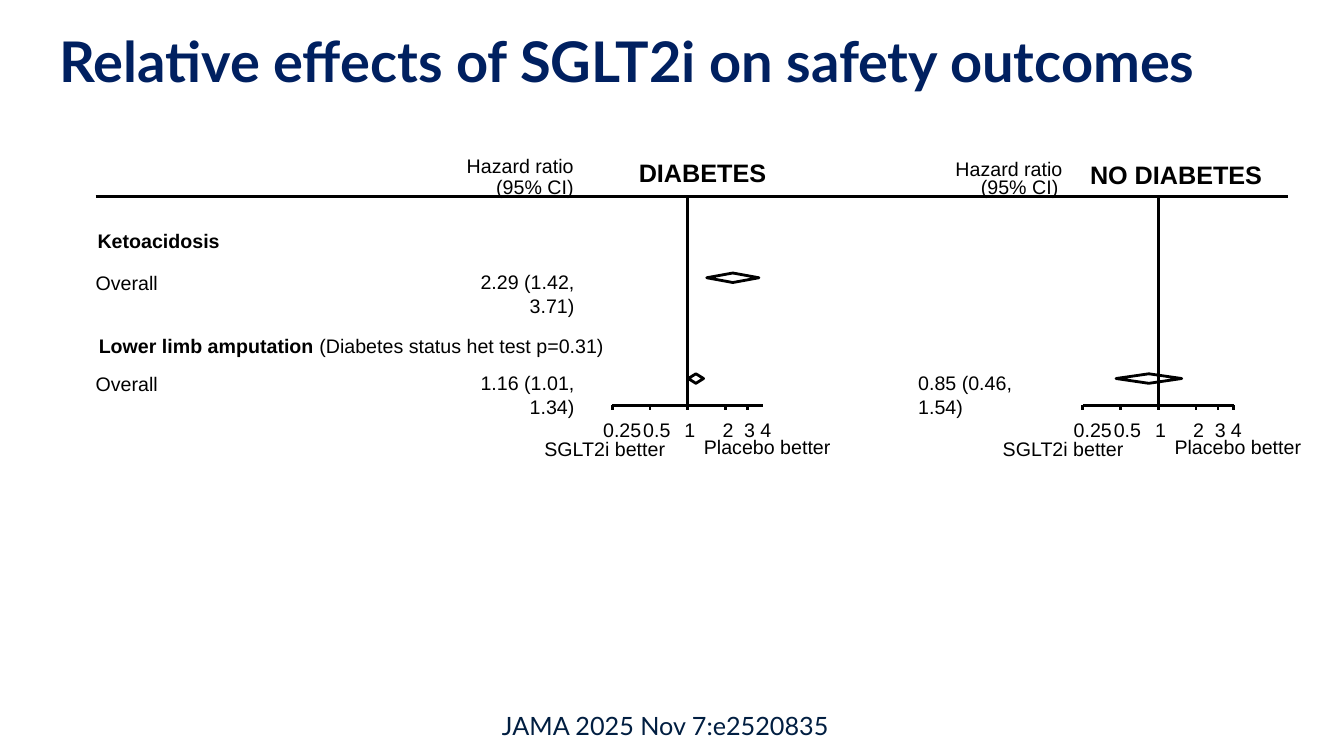
from math import log2

from lxml.etree import SubElement
from pptx import Presentation
from pptx.dml.color import RGBColor
from pptx.enum.shapes import MSO_CONNECTOR as Connector, MSO_SHAPE as Shape
from pptx.enum.text import MSO_ANCHOR as Anchor, MSO_AUTO_SIZE as AutoSize, PP_ALIGN as Align
from pptx.oxml.ns import qn
from pptx.util import Cm, Pt

BLACK = RGBColor(0x00, 0x00, 0x00)
WHITE = RGBColor(0xFF, 0xFF, 0xFF)
NAVY = RGBColor(0x00, 0x20, 0x60)
DARK_BLUE = RGBColor(0x01, 0x1E, 0x41)

# Vertical positions and axis scale, in centimetres
RULE_Y, AXIS_Y, TICK_END = 4.95, 10.21, 10.34
KETOACIDOSIS_Y, AMPUTATION_Y = 7.0, 9.54
DOUBLING = 0.95
DIABETES_X, NO_DIABETES_X = 17.33, 29.19

# Hazard ratio, label, label shift from its tick, label width
TICKS = [
    (0.25, "0.25", 0.23, 0.97),
    (0.5, "0.5", 0.17, 0.69),
    (1, "1", 0.08, 0.28),
    (2, "2", 0.07, 0.28),
    (3, "3", 0.08, 0.28),
    (4, "4", 0.07, 0.28),
]


def add_run(paragraph, text, size=14, bold=False, name="Arial", color=BLACK):
    run = paragraph.add_run()
    run.text = text
    run.font.size = Pt(size)
    run.font.bold = bold
    run.font.name = name
    run.font.color.rgb = color


def clear_margins(frame):
    frame.margin_left = frame.margin_right = Cm(0)
    frame.margin_top = frame.margin_bottom = Cm(0)


def add_label(slide, x, y, width, *runs, size=14, align=Align.LEFT):
    """Each run is a (text, bold) pair."""
    box = slide.shapes.add_textbox(Cm(x), Cm(y), Cm(width), Cm(size * 0.043))
    frame = box.text_frame
    clear_margins(frame)
    frame.word_wrap = False
    frame.auto_size = AutoSize.SHAPE_TO_FIT_TEXT
    paragraph = frame.paragraphs[0]
    paragraph.alignment = align
    for text, bold in runs:
        add_run(paragraph, text, size, bold)


def add_line(slide, x1, y1, x2, y2):
    line = slide.shapes.add_connector(Connector.STRAIGHT, Cm(x1), Cm(y1), Cm(x2), Cm(y2))
    line.line.color.rgb = BLACK
    line.line.width = Pt(2)
    SubElement(line.element.spPr, qn("a:effectLst"))


def ratio_x(one_x, ratio):
    return one_x + DOUBLING * log2(ratio)


def add_diamond(slide, one_x, y, low, high):
    left, right = ratio_x(one_x, low), ratio_x(one_x, high)
    middle = (left + right) / 2
    builder = slide.shapes.build_freeform(Cm(left), Cm(y))
    corners = [(middle, y + 0.12), (right, y), (middle, y - 0.12)]
    builder.add_line_segments([(Cm(x), Cm(corner_y)) for x, corner_y in corners], close=True)
    diamond = builder.convert_to_shape()
    diamond.shadow.inherit = False
    diamond.fill.background()
    diamond.line.color.rgb = BLACK
    diamond.line.width = Pt(2)


def add_axis(slide, one_x, sglt2i_x, last_tick):
    for ratio, text, shift, width in TICKS:
        x = ratio_x(one_x, ratio)
        add_label(slide, x - shift, 10.52, width, (text, False))
        if ratio <= last_tick:
            add_line(slide, x, AXIS_Y, x, TICK_END)
    add_line(slide, one_x, AXIS_Y, one_x, RULE_Y)
    add_line(slide, ratio_x(one_x, 0.25), AXIS_Y, ratio_x(one_x, 4), AXIS_Y)
    add_label(slide, sglt2i_x, 11.0, 3.05, ("SGLT2i better", False))
    add_label(slide, one_x + 0.41, 10.95, 3.2, ("Placebo better", False))


def add_title(slide, text):
    title = slide.shapes.title
    title.left, title.top, title.width, title.height = Cm(1.5), Cm(1.09), Cm(32.13), Cm(1.27)
    frame = title.text_frame
    clear_margins(frame)
    frame.auto_size = AutoSize.NONE
    frame.vertical_anchor = Anchor.BOTTOM
    paragraph = frame.paragraphs[0]
    paragraph.alignment = Align.LEFT
    paragraph.line_spacing = 0.85
    add_run(paragraph, text, 40, True, "Lato", NAVY)


def add_citation(slide, text):
    shape = slide.shapes.add_shape(Shape.RECTANGLE, Cm(12.65), Cm(17.22), Cm(8.59), Cm(1.45))
    shape.shadow.inherit = False
    shape.fill.solid()
    shape.fill.fore_color.rgb = WHITE
    shape.line.fill.background()
    frame = shape.text_frame
    clear_margins(frame)
    frame.word_wrap = False
    frame.vertical_anchor = Anchor.BOTTOM
    paragraph = frame.paragraphs[0]
    paragraph.alignment = Align.LEFT
    add_run(paragraph, text, 18, False, "Lato", DARK_BLUE)


def main():
    presentation = Presentation()
    presentation.slide_width, presentation.slide_height = Cm(33.87), Cm(19.05)
    slide = presentation.slides.add_slide(presentation.slide_layouts[5])
    add_title(slide, "Relative effects of SGLT2i on safety outcomes")

    # Column headings
    add_label(slide, 11.74, 3.89, 2.72, ("Hazard ratio", False), align=Align.RIGHT)
    add_label(slide, 12.5, 4.4, 1.96, ("(95% CI)", False), align=Align.RIGHT)
    add_label(slide, 16.1, 3.97, 3.25, ("DIABETES", True), size=18)
    add_label(slide, 24.08, 3.95, 2.72, ("Hazard ratio", False))
    add_label(slide, 24.72, 4.4, 1.96, ("(95% CI)", False))
    add_label(slide, 27.47, 4.02, 4.39, ("NO DIABETES", True), size=18)
    add_line(slide, 2.41, RULE_Y, 32.46, RULE_Y)

    # Axes of the two panels
    add_axis(slide, DIABETES_X, 13.72, last_tick=3)
    add_axis(slide, NO_DIABETES_X, 25.27, last_tick=4)

    # Ketoacidosis
    add_label(slide, 2.46, 5.77, 3.1, ("Ketoacidosis", True))
    add_label(slide, 2.41, 6.83, 1.57, ("Overall", False))
    add_label(slide, 10.85, 6.81, 3.63, ("2.29 (1.42, 3.71)", False), align=Align.RIGHT)
    add_diamond(slide, DIABETES_X, KETOACIDOSIS_Y, 1.42, 3.71)

    # Lower limb amputation
    add_label(slide, 2.49, 8.41, 13.18, ("Lower limb amputation ", True),
              ("(Diabetes status het test p=0.31)", False))
    add_label(slide, 2.41, 9.37, 1.57, ("Overall", False))
    add_label(slide, 10.85, 9.35, 3.63, ("1.16 (1.01, 1.34)", False), align=Align.RIGHT)
    add_diamond(slide, DIABETES_X, AMPUTATION_Y, 1.01, 1.34)
    add_label(slide, 23.14, 9.35, 3.63, ("0.85 (0.46, 1.54)", False))
    add_diamond(slide, NO_DIABETES_X, AMPUTATION_Y, 0.46, 1.54)

    add_citation(slide, "JAMA 2025 Nov 7:e2520835")
    presentation.save("out.pptx")


if __name__ == "__main__":
    main()
